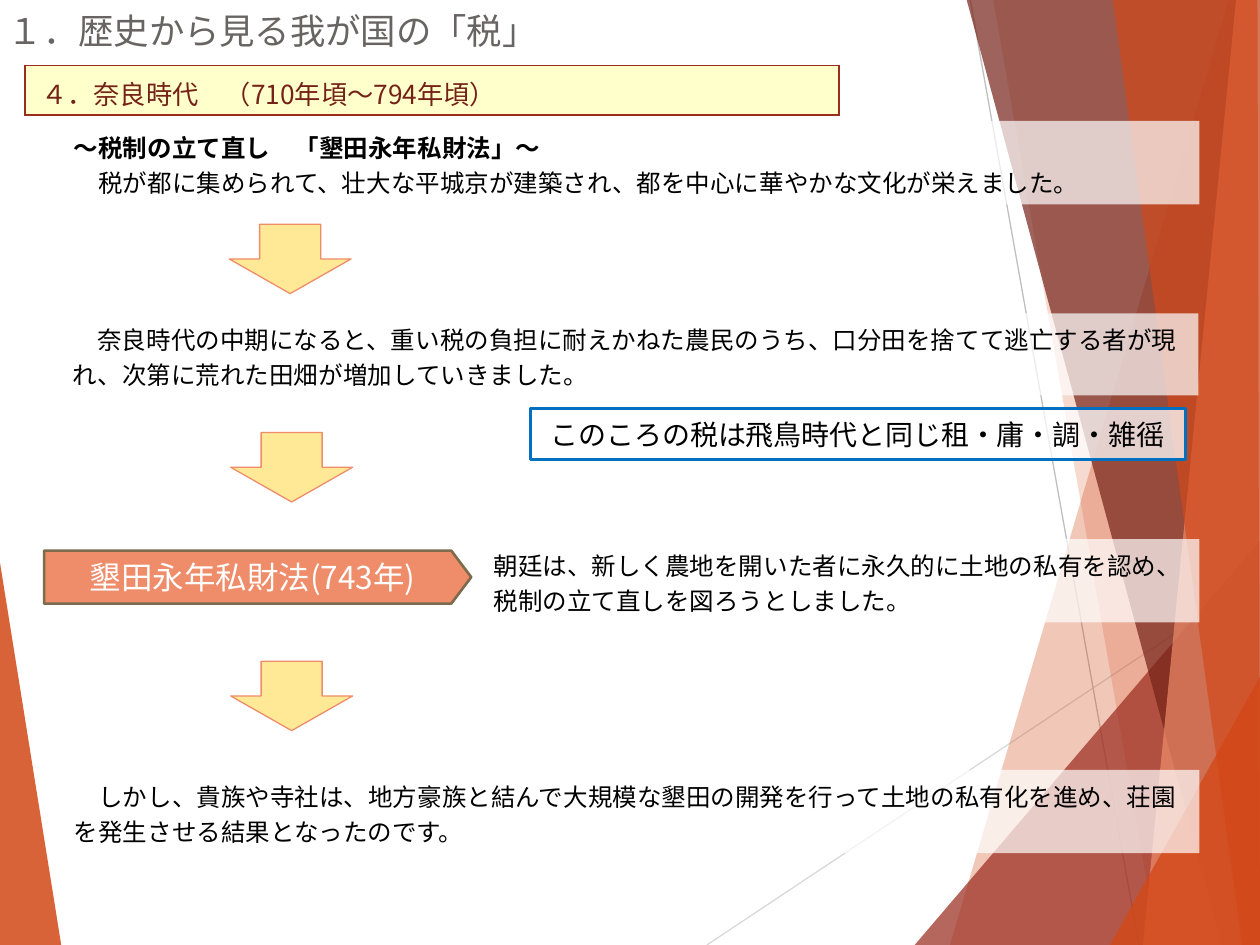
"""Build a slide on the Nara period in the history of Japanese taxes."""
import pptx
import pptx.dml.color
import pptx.enum.shapes
import pptx.enum.text
import pptx.oxml
import pptx.oxml.ns
import pptx.util

Cm = pptx.util.Cm
Pt = pptx.util.Pt
RGBColor = pptx.dml.color.RGBColor
Shape = pptx.enum.shapes.MSO_SHAPE
Align = pptx.enum.text.PP_ALIGN
Anchor = pptx.enum.text.MSO_ANCHOR
Fit = pptx.enum.text.MSO_AUTO_SIZE

BLACK = RGBColor(0x00, 0x00, 0x00)
WHITE = RGBColor(0xFF, 0xFF, 0xFF)
GRAY = RGBColor(0x69, 0x64, 0x64)
SILVER = RGBColor(0xBF, 0xBF, 0xBF)
PALE_GRAY = RGBColor(0xD9, 0xD9, 0xD9)
ORANGE = RGBColor(0xD3, 0x48, 0x17)
RED = RGBColor(0x9B, 0x2D, 0x1F)
MAROON = RGBColor(0x74, 0x22, 0x17)
SALMON = RGBColor(0xEF, 0x8C, 0x6A)
BROWN = RGBColor(0x7C, 0x6B, 0x4D)
CREAM = RGBColor(0xFF, 0xFF, 0xCC)
YELLOW = RGBColor(0xFF, 0xD2, 0x2F)
BLUE = RGBColor(0x00, 0x70, 0xC0)


def write(frame, *lines, size=14, color=BLACK, font="Noto Sans CJK JP",
          align=Align.LEFT, anchor=Anchor.TOP, spacing=None, bold_first=False):
    """Fill a text frame with one paragraph per line in the given format."""
    frame.word_wrap = True
    frame.vertical_anchor = anchor
    for index, line in enumerate(lines):
        para = frame.paragraphs[0] if index == 0 else frame.add_paragraph()
        para.alignment = align
        if spacing:
            para.line_spacing = Pt(spacing)
        span = para.add_run()
        span.text = line
        span.font.size = Pt(size)
        span.font.bold = bold_first and index == 0
        span.font.name = font
        span.font.color.rgb = color
        east = pptx.oxml.parse_xml(
            f'<a:ea {pptx.oxml.ns.nsdecls("a")} typeface="{font}"/>')
        span.font._element.find(pptx.oxml.ns.qn("a:latin")).addnext(east)


class TaxSlide:
    """Hold the current page and draw its kinds of element."""

    def __init__(self, page):
        self.page = page
        self.backdrop = page.shapes.add_group_shape().shapes

    def paint(self, shape, fill, opacity=100, line=None, width=0.75):
        """Set the fill, opacity and outline of a shape."""
        shape.shadow.inherit = False
        shape.fill.solid()
        shape.fill.fore_color.rgb = fill
        if opacity < 100:
            shade = shape._element.spPr.find(".//" + pptx.oxml.ns.qn("a:srgbClr"))
            shade.append(pptx.oxml.parse_xml(
                f'<a:alpha {pptx.oxml.ns.nsdecls("a")} val="{opacity * 1000}"/>'))
        if line is None:
            shape.line.fill.background()
        else:
            shape.line.color.rgb = line
            shape.line.width = Pt(width)

    def facet(self, color, opacity, *points):
        """Draw one translucent polygon of the backdrop."""
        corners = [(Cm(x), Cm(y)) for x, y in points]
        builder = self.backdrop.build_freeform(*corners[0])
        builder.add_line_segments(corners[1:], close=True)
        self.paint(builder.convert_to_shape(), color, opacity)

    def ray(self, color, *ends):
        """Draw one thin line of the backdrop."""
        line = self.backdrop.add_connector(
            pptx.enum.shapes.MSO_CONNECTOR.STRAIGHT, *map(Cm, ends))
        line.line.color.rgb = color
        line.line.width = Pt(0.75)
        line._element.spPr.append(pptx.oxml.parse_xml(
            f'<a:effectLst {pptx.oxml.ns.nsdecls("a")}/>'))

    def title(self, text, *place):
        """Add the page heading."""
        frame = self.page.shapes.add_textbox(*map(Cm, place)).text_frame
        frame.margin_left = frame.margin_right = 0
        frame.margin_top = frame.margin_bottom = 0
        write(frame, text, size=20.2, color=GRAY, anchor=Anchor.MIDDLE)

    def banner(self, text, *place):
        """Add the bordered one-cell table naming the period."""
        table = self.page.shapes.add_table(1, 1, *map(Cm, place)).table
        table.first_row = table.horz_banding = False
        cell = table.cell(0, 0)
        cell.margin_left = cell.margin_right = Cm(0.33)
        cell.margin_top = cell.margin_bottom = Cm(0.18)
        write(cell.text_frame, text, size=15, color=MAROON)
        properties = cell._tc.get_or_add_tcPr()
        for side in ("lnL", "lnR", "lnT", "lnB"):
            properties.append(pptx.oxml.parse_xml(
                f'<a:{side} {pptx.oxml.ns.nsdecls("a")} w="{Pt(1)}">'
                f'<a:solidFill><a:srgbClr val="{RED}"/></a:solidFill></a:{side}>'))
        cell.fill.solid()
        cell.fill.fore_color.rgb = CREAM

    def shape(self, kind, place, fill, **style):
        """Add a painted preset shape."""
        box = self.page.shapes.add_shape(kind, *map(Cm, place))
        self.paint(box, fill, **style)
        return box

    def passage(self, place, *lines, **style):
        """Add a translucent panel of body text."""
        box = self.shape(Shape.RECTANGLE, place, WHITE, opacity=70)
        write(box.text_frame, *lines, spacing=20, **style)
        box.text_frame.auto_size = Fit.SHAPE_TO_FIT_TEXT

    def label(self, kind, place, text, fill, size, color, **style):
        """Add an outlined shape with centred text."""
        box = self.shape(kind, place, fill, width=1.5, **style)
        write(box.text_frame, text, size=size, color=color,
              align=Align.CENTER, anchor=Anchor.MIDDLE)
        return box


def main():
    """Assemble and save the deck."""
    deck = pptx.Presentation()
    deck.slide_width, deck.slide_height = Cm(25.4), Cm(19.05)
    slide = TaxSlide(deck.slides.add_slide(deck.slide_layouts[6]))

    top, bottom, edge = -0.03, 19.05, 25.43
    slide.facet(ORANGE, 85, (-0.03, 11.15), (1.24, 19.08), (-0.03, bottom))
    slide.ray(PALE_GRAY, 14.25, bottom, edge, 11.61)
    slide.ray(SILVER, 19.56, 0, 22.96, bottom)
    for color, opacity, points in (
        (ORANGE, 30, [(24.77, 0), (19.15, bottom), (edge, bottom), (edge, 0)]),
        (ORANGE, 20, [(20.02, top), (23.34, bottom), (edge, bottom), (edge, top)]),
        (RED, 72, [(18.44, bottom), (25.4, 10.9), (edge, bottom)]),
        (MAROON, 70, [(19.48, top), (24.64, bottom), (edge, bottom), (edge, top)]),
        (SALMON, 70, [(24.92, top), (23.04, bottom), (edge, bottom), (25.4, top)]),
        (ORANGE, 65, [(22.43, top), (25.04, bottom), (25.4, bottom), (25.35, top)]),
        (ORANGE, 80, [(22.38, bottom), (edge, 13.59), (edge, bottom)]),
    ):
        slide.facet(color, opacity, *points)

    slide.title(" １．歴史から見る我が国の「税」", 0, 0.05, 13.89, 1.14)
    slide.banner("４．奈良時代　（710年頃～794年頃）", 0.5, 1.32, 16.41, 0.97)
    slide.passage(
        (1.24, 2.44, 22.94, 1.68),
        "～税制の立て直し　「墾田永年私財法」～",
        "　税が都に集められて、壮大な平城京が建築され、都を中心に華やかな文化が栄えました。",
        bold_first=True)
    law = slide.label(Shape.PENTAGON, (0.89, 11.1, 8.61, 1.07),
                      "墾田永年私財法(743年)", SALMON, 18, WHITE, line=BROWN)
    law.adjustments[0] = 0.375
    for place, text in (
        ((1.22, 6.32, 22.94, 1.65),
         "　奈良時代の中期になると、重い税の負担に耐えかねた農民のうち、口分田を捨てて逃亡する者が現れ、次第に荒れた田畑が増加していきました。"),
        ((9.7, 10.87, 14.48, 1.68),
         "朝廷は、新しく農地を開いた者に永久的に土地の私有を認め、税制の立て直しを図ろうとしました。"),
        ((1.24, 15.52, 22.94, 1.68),
         "　しかし、貴族や寺社は、地方豪族と結んで大規模な墾田の開発を行って土地の私有化を進め、荘園を発生させる結果となったのです。"),
    ):
        slide.passage(place, text)
    for left, height in ((4.62, 4.52), (4.65, 8.72), (4.65, 13.33)):
        slide.shape(Shape.DOWN_ARROW, (left, height, 2.46, 1.4), YELLOW,
                    opacity=50, line=SALMON)
    slide.label(Shape.RECTANGLE, (10.69, 8.23, 13.21, 1.04),
                "このころの税は飛鳥時代と同じ租・庸・調・雑徭",
                WHITE, 16, BLACK, opacity=75, line=BLUE)
    deck.save("out.pptx")


if __name__ == "__main__":
    main()
